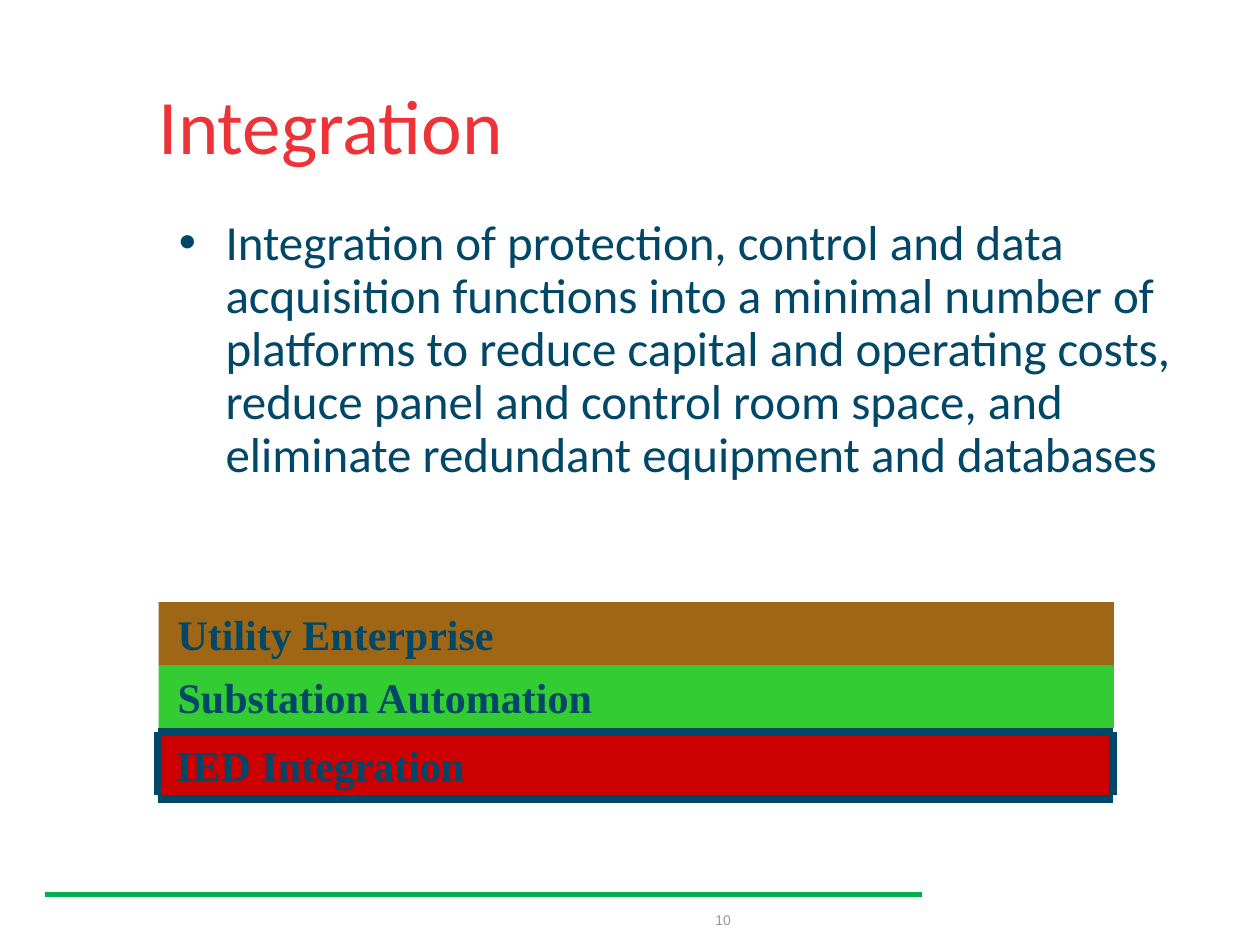
from dataclasses import dataclass

from pptx import Presentation
from pptx.dml.color import RGBColor
from pptx.enum import shapes, text
from pptx.oxml import ns
from pptx.util import Inches, Pt

COLORS = {
    "title": "EE3338", "navy": "004768", "grey": "96989B", "rule": "00B050",
    "brown": "9F6715", "green": "33CC33", "red": "CC0000",
}
WIDE, HIGH = 7.58, 0.5


@dataclass
class Bar:
    label: str
    color: str
    left: float
    top: float


@dataclass
class Line:
    start: tuple[float, float]
    end: tuple[float, float]
    color: str = "navy"
    width: float = 4.5


def rgb(name: str) -> RGBColor:
    return RGBColor.from_string(COLORS[name])


def style(par, face: str, size: float, color: str, bold: bool = False) -> None:
    font = par.font
    font.name, font.size, font.bold = face, Pt(size), bold
    font.color.rgb = rgb(color)


def place(shape, left: float, top: float, width: float, height: float) -> None:
    shape.left, shape.top = Inches(left), Inches(top)
    shape.width, shape.height = Inches(width), Inches(height)


def draw_bar(slide, bar: Bar) -> None:
    shape = slide.shapes.add_shape(
        shapes.MSO_SHAPE.RECTANGLE,
        Inches(bar.left), Inches(bar.top), Inches(WIDE), Inches(HIGH))
    shape.shadow.inherit = False
    shape.fill.solid()
    shape.fill.fore_color.rgb = rgb(bar.color)
    shape.line.fill.background()
    frame = shape.text_frame
    frame.word_wrap = True
    frame.margin_left = Inches(0.15)
    frame.vertical_anchor = text.MSO_ANCHOR.MIDDLE
    par = frame.paragraphs[0]
    par.text = bar.label
    par.alignment = text.PP_ALIGN.LEFT
    style(par, "Times New Roman", 24, "navy", bold=True)


def draw_line(slide, line: Line) -> None:
    ends = [Inches(n) for n in (*line.start, *line.end)]
    link = slide.shapes.add_connector(shapes.MSO_CONNECTOR.STRAIGHT, *ends)
    link.line.color.rgb = rgb(line.color)
    link.line.width = Pt(line.width)
    props = link._element.spPr
    props.append(props.makeelement(ns.qn("a:effectLst"), {}))


def fill_title(slide) -> None:
    title = slide.shapes.title
    place(title, 1.16, 0.61, 8.4, 0.83)
    frame = title.text_frame
    frame.auto_size = text.MSO_AUTO_SIZE.NONE
    frame.vertical_anchor = text.MSO_ANCHOR.MIDDLE
    par = frame.paragraphs[0]
    par.text = "Integration"
    par.alignment = text.PP_ALIGN.LEFT
    par.line_spacing = 0.9
    style(par, "Calibri", 44, "title")


def fill_body(slide) -> None:
    body = slide.placeholders[1]
    place(body, 1.32, 1.68, 8.26, 2.29)
    frame = body.text_frame
    frame.auto_size = text.MSO_AUTO_SIZE.NONE
    par = frame.paragraphs[0]
    par.text = (
        "Integration of protection, control and data acquisition functions "
        "into a minimal number of platforms to reduce capital and operating "
        "costs, reduce panel and control room space, and eliminate redundant "
        "equipment and databases")
    par.line_spacing = 0.9
    par.space_before = Pt(0)
    props = par._p.get_or_add_pPr()
    props.set("marL", str(Inches(0.37)))
    props.set("indent", str(-Inches(0.37)))
    style(par, "Calibri", 28, "navy")


def add_number(slide) -> None:
    box = slide.shapes.add_textbox(
        Inches(3.65), Inches(7.1), Inches(2.25), Inches(0.4))
    frame = box.text_frame
    frame.word_wrap = True
    frame.vertical_anchor = text.MSO_ANCHOR.MIDDLE
    par = frame.paragraphs[0]
    par.text = "10"
    par.alignment = text.PP_ALIGN.RIGHT
    style(par, "Arial", 8, "grey")


def main() -> None:
    deck = Presentation()
    deck.slide_width, deck.slide_height = Inches(10), Inches(7.5)
    slide = deck.slides.add_slide(deck.slide_layouts[1])

    draw_line(slide, Line((0.36, 7.1), (7.32, 7.1), "rule", 3))
    add_number(slide)
    fill_title(slide)
    fill_body(slide)

    bars = [
        Bar("IED Integration", "red", 1.25, 5.82),
        Bar("Substation Automation", "green", 1.26, 5.28),
        Bar("Utility Enterprise", "brown", 1.26, 4.78),
    ]
    for bar in bars:
        draw_bar(slide, bar)

    # Frame around the highlighted bottom bar
    left, right, top = 1.25, 1.25 + WIDE, 5.81
    for y in (6.34, top):
        draw_line(slide, Line((left, y), (right, y)))
    for x in (right, left):
        draw_line(slide, Line((x, top + HIGH), (x, top)))

    deck.save("out.pptx")


if __name__ == "__main__":
    main()
